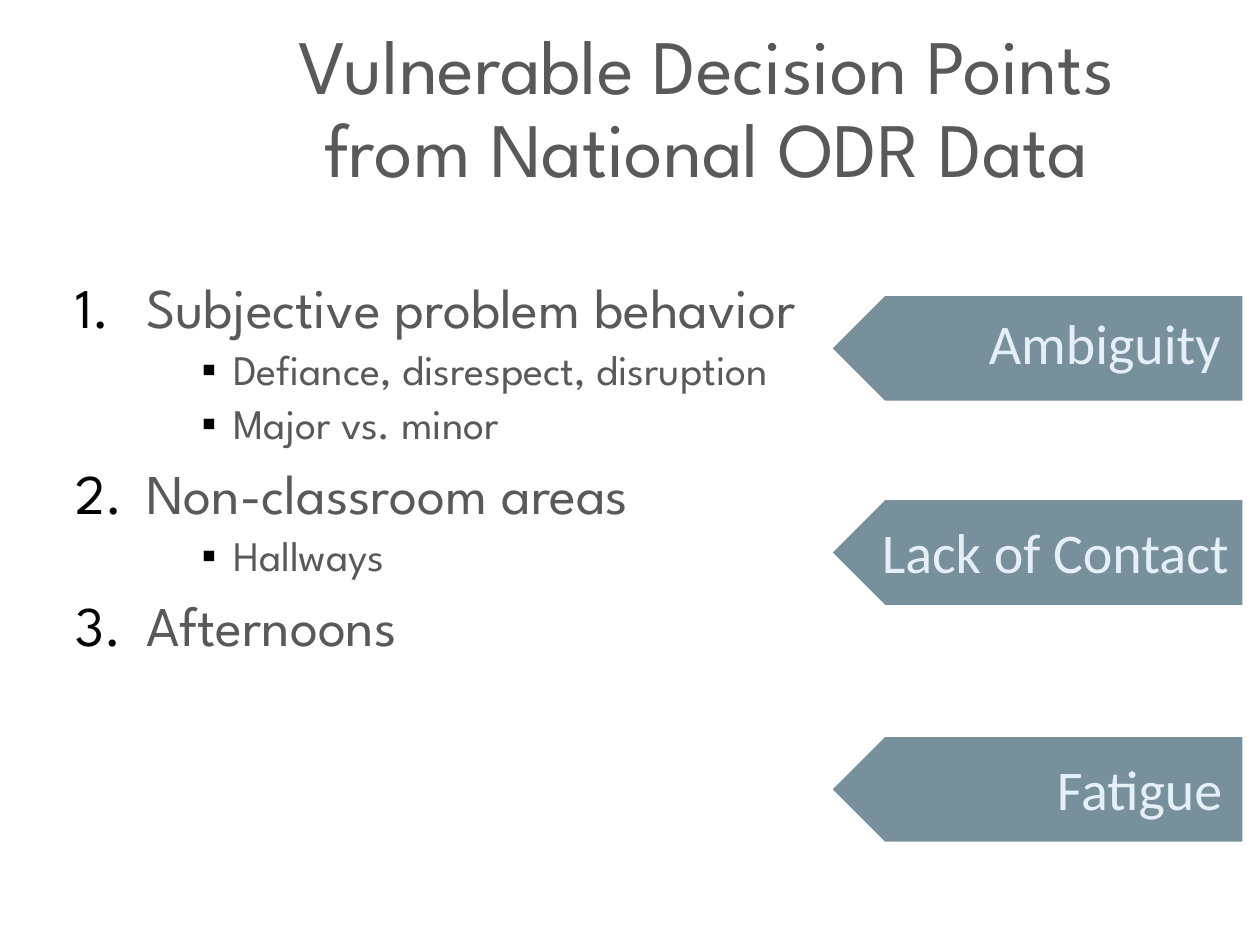
"""Build the slide on vulnerable decision points with three arrow labels."""
from lxml import etree
from pptx import Presentation
from pptx.dml.color import RGBColor
from pptx.enum.shapes import MSO_SHAPE
from pptx.enum.text import MSO_ANCHOR, MSO_AUTO_SIZE, PP_ALIGN
from pptx.oxml.ns import qn
from pptx.util import Inches, Pt

PENTAGON = MSO_SHAPE.PENTAGON
CENTER, LEFT = PP_ALIGN.CENTER, PP_ALIGN.LEFT
MIDDLE, TOP = MSO_ANCHOR.MIDDLE, MSO_ANCHOR.TOP
NO_AUTOFIT = MSO_AUTO_SIZE.NONE

COLORS = {"text": "595959", "marker": "000000", "arrow": "78909C", "label": "E5EFF8"}
HEADING_FONT, LABEL_FONT = "League Spartan", "Calibri"

TITLE = "Vulnerable Decision Points from National ODR Data"
TOPICS = [
    ("Subjective problem behavior", ["Defiance, disrespect, disruption", "Major vs. minor"]),
    ("Non-classroom areas", ["Hallways"]),
    ("Afternoons", []),
]
ARROWS = [
    ("Ambiguity", 2.35, (7.75, 2.4, 2.07, 0.64)),
    ("Lack of Contact", 3.97, (6.9, 4.06, 2.96, 0.64)),
    ("Fatigue", 5.85, (8.29, 5.94, 1.53, 0.64)),
]
ARROW_LEFT, ARROW_WIDTH, ARROW_HEIGHT = 6.61, 3.25, 0.83
LEVELS = [
    {"size": 32, "before": 10, "margin": 0.56, "indent": -0.56,
     "font": HEADING_FONT, "marker": ("a:buAutoNum", {"type": "arabicPeriod"})},
    {"size": 24, "before": 5, "margin": 1.25, "indent": -0.25,
     "font": "Arial", "marker": ("a:buChar", {"char": "▪"})},
]


def place(shape, box):
    shape.left, shape.top, shape.width, shape.height = map(Inches, box)


def prepare_frame(shape, anchor=TOP, wrap=True):
    frame = shape.text_frame
    frame.auto_size = NO_AUTOFIT
    frame.word_wrap = wrap
    frame.vertical_anchor = anchor
    return frame


def write(paragraph, text, size, font=HEADING_FONT, color="text", align=LEFT,
          spacing=None, before=0, after=0):
    paragraph.alignment = align
    paragraph.line_spacing = spacing
    paragraph.space_before, paragraph.space_after = Pt(before), Pt(after)
    run = paragraph.add_run()
    run.text = text
    run.font.size, run.font.name = Pt(size), font
    run.font.color.rgb = RGBColor.from_string(COLORS[color])


def add_marker(paragraph, level):
    properties = paragraph._p.get_or_add_pPr()
    properties.set("marL", str(Inches(level["margin"])))
    properties.set("indent", str(Inches(level["indent"])))
    color = etree.SubElement(properties, qn("a:buClr"))
    etree.SubElement(color, qn("a:srgbClr"), val=COLORS["marker"])
    etree.SubElement(properties, qn("a:buFont"), typeface=level["font"])
    tag, attributes = level["marker"]
    etree.SubElement(properties, qn(tag), attributes)


def add_title(slide):
    title = slide.shapes.title
    place(title, (1.79, 0.38, 7.64, 1))
    frame = prepare_frame(title, anchor=MIDDLE)
    write(frame.paragraphs[0], TITLE, 44, align=CENTER, spacing=0.9)


def add_topics(slide):
    body = slide.placeholders[1]
    place(body, (0.5, 2.17, 7.93, 4.7))
    frame = prepare_frame(body)
    lines = [(depth, text) for topic, details in TOPICS
             for depth, text in [(0, topic)] + [(1, detail) for detail in details]]
    for index, (depth, text) in enumerate(lines):
        paragraph = frame.add_paragraph() if index else frame.paragraphs[0]
        level = LEVELS[depth]
        paragraph.level = depth
        add_marker(paragraph, level)
        write(paragraph, text, level["size"], spacing=0.9,
              before=level["before"] if index else 0)


def add_arrow(slide, label, top, label_box):
    arrow = slide.shapes.add_shape(PENTAGON, 0, 0, 0, 0)
    place(arrow, (ARROW_LEFT, top, ARROW_WIDTH, ARROW_HEIGHT))
    arrow.adjustments[0] = 0.5
    arrow._element.spPr.find(qn("a:xfrm")).set("flipH", "1")
    arrow.shadow.inherit = False
    arrow.fill.solid()
    arrow.fill.fore_color.rgb = RGBColor.from_string(COLORS["arrow"])
    arrow.line.fill.background()
    textbox = slide.shapes.add_textbox(*map(Inches, label_box))
    frame = prepare_frame(textbox, wrap=False)
    write(frame.paragraphs[0], label, 32, font=LABEL_FONT, color="label")


def main():
    presentation = Presentation()
    presentation.slide_width, presentation.slide_height = Inches(10), Inches(7.5)
    slide = presentation.slides.add_slide(presentation.slide_layouts[1])
    add_title(slide)
    add_topics(slide)
    for label, top, label_box in ARROWS:
        add_arrow(slide, label, top, label_box)
    presentation.save("out.pptx")


if __name__ == "__main__":
    main()
